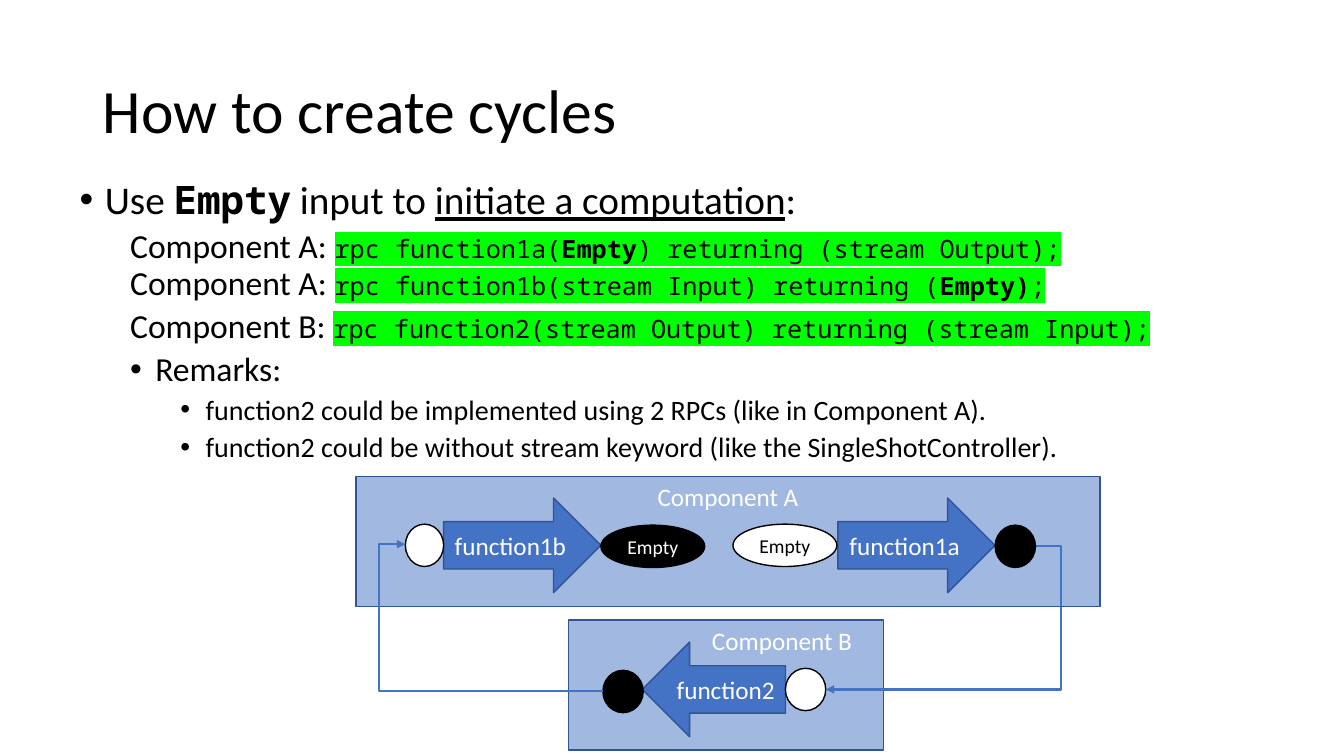
from dataclasses import dataclass
from lxml.etree import SubElement
from pptx import Presentation
from pptx.dml.color import RGBColor
from pptx.enum.shapes import MSO_CONNECTOR, MSO_SHAPE
from pptx.enum.text import MSO_ANCHOR, MSO_AUTO_SIZE, PP_ALIGN
from pptx.oxml.ns import qn
from pptx.util import Pt

SCALE = 9144


@dataclass(frozen=True)
class Theme:
    """Colours, fonts and type sizes of the slide."""
    blue: str = "4472C4"
    edge: str = "325491"
    white: str = "FFFFFF"
    black: str = "000000"
    green: str = "00FF00"
    sans: str = "Calibri"
    mono: str = "Noto Sans Mono"
    title: int = 44
    lead: int = 28
    item: int = 24
    note: int = 20
    label: int = 18
    small: int = 14


THEME = Theme()


def px(count):
    """Turn px into EMU."""
    return count * SCALE


def write(par, text, size=THEME.label, color=THEME.black, font=THEME.sans,
          bold=False, under=False, mark=None):
    """Add one formatted run to a paragraph."""
    run = par.add_run()
    run.text = text
    run.font.size = Pt(size)
    run.font.bold = bold
    run.font.underline = under
    run.font.color.rgb = RGBColor.from_string(color)
    if mark:
        light = SubElement(run.font._element, qn("a:highlight"))
        SubElement(light, qn("a:srgbClr"), val=mark)
    run.font.name = font


class Board:
    """Draws elements on the current slide in one style."""

    def __init__(self, deck, theme):
        """Open a title and content slide."""
        self.theme = theme
        self.slide = deck.slides.add_slide(deck.slide_layouts[1])

    def hold(self, index, box, anchor):
        """Move a placeholder and return its text frame."""
        shape = self.slide.placeholders[index]
        shape.left, shape.top, shape.width, shape.height = map(px, box)
        frame = shape.text_frame
        frame.word_wrap = True
        frame.auto_size = MSO_AUTO_SIZE.NONE
        frame.vertical_anchor = anchor
        return frame

    def title(self, text, box):
        """Fill the title."""
        par = self.hold(0, box, MSO_ANCHOR.MIDDLE).paragraphs[0]
        par.alignment = PP_ALIGN.LEFT
        par.line_spacing = 0.9
        write(par, text, size=self.theme.title)

    def body(self, rows, box):
        """Fill the list from rows of level, indent, bullet and runs."""
        frame = self.hold(1, box, MSO_ANCHOR.TOP)
        for num, (level, left, dot, runs) in enumerate(rows):
            par = frame.add_paragraph() if num else frame.paragraphs[0]
            par.level = level
            par.line_spacing = 0.9 if level else 2.1
            par.space_before = Pt(5 if level else 10)
            par.space_after = Pt(0)
            props = par._p.get_or_add_pPr()
            props.set("marL", str(px(left)))
            props.set("indent", str(px(-25 if dot else 0)))
            if dot:
                SubElement(props, qn("a:buFont"), typeface="Arial")
                SubElement(props, qn("a:buChar"), char="•")
            else:
                SubElement(props, qn("a:buNone"))
            for text, style in runs:
                if text == "\n":
                    gap = SubElement(par._p, qn("a:br"))
                    SubElement(gap, qn("a:rPr"), sz=str(self.theme.label * 100))
                else:
                    write(par, text, **style)

    def shape(self, kind, box, fill, edge, text="", anchor=MSO_ANCHOR.MIDDLE,
              align=PP_ALIGN.CENTER, inset=10, **style):
        """Draw a preset shape with an optional label."""
        shape = self.slide.shapes.add_shape(kind, *map(px, box))
        shape.shadow.inherit = False
        shape.fill.solid()
        shape.fill.fore_color.rgb = RGBColor.from_string(fill)
        shape.line.color.rgb = RGBColor.from_string(edge)
        shape.line.width = Pt(1)
        if text:
            frame = shape.text_frame
            frame.vertical_anchor = anchor
            frame.margin_right = px(inset)
            par = frame.paragraphs[0]
            par.alignment = align
            write(par, text, **style)
        return shape

    def panel(self, text, box, **style):
        """Draw a half transparent component box."""
        look = self.theme
        shape = self.shape(MSO_SHAPE.RECTANGLE, box, look.blue, look.edge, text,
                           anchor=MSO_ANCHOR.TOP, color=look.white, **style)
        tint = shape._element.spPr.find(qn("a:solidFill")).find(qn("a:srgbClr"))
        SubElement(tint, qn("a:alpha"), val="50000")

    def arrow(self, kind, text, box):
        """Draw a block arrow for a function."""
        look = self.theme
        self.shape(kind, box, look.blue, look.edge, text, color=look.white)

    def port(self, box, dark, text=""):
        """Draw an oval port, black for output and white for input."""
        look = self.theme
        fill, ink = (look.black, look.white) if dark else (look.white, look.black)
        self.shape(MSO_SHAPE.OVAL, box, fill, look.black, text,
                   size=look.small, color=ink)

    def link(self, start, end, bend):
        """Draw a bent arrow whose middle part lies at x = bend."""
        line = self.slide.shapes.add_connector(
            MSO_CONNECTOR.ELBOW, *map(px, start + end))
        line.line.color.rgb = RGBColor.from_string(self.theme.blue)
        line.line.width = Pt(1.5)
        props = line._element.spPr
        SubElement(props.find(qn("a:ln")), qn("a:tailEnd"), type="triangle")
        SubElement(props, qn("a:effectLst"))
        ratio = round((bend - start[0]) / (end[0] - start[0]) * 100000)
        guides = props.find(qn("a:prstGeom")).find(qn("a:avLst"))
        SubElement(guides, qn("a:gd"), name="adj1", fmla=f"val {ratio}")


def main():
    """Build and save the slide."""
    deck = Presentation()
    deck.slide_width, deck.slide_height = px(1333), px(750)
    board = Board(deck, THEME)
    lead = {"size": THEME.lead}
    item = {"size": THEME.item}
    note = {"size": THEME.note}
    code = {"font": THEME.mono, "mark": THEME.green}
    bold = {**code, "bold": True}

    board.title("How to create cycles", (92, 40, 1150, 145))
    board.body([
        (0, 25, True, [
            ("Use ", lead),
            ("Empty", {**lead, "font": THEME.mono, "bold": True}),
            (" input to ", lead),
            ("initiate a computation", {**lead, "under": True}),
            (":", lead)]),
        (1, 50, False, [
            ("Component A: ", item), ("rpc function1a(", code),
            ("Empty", bold), (") returning (stream Output);", code),
            ("\n", {}),
            ("Component A: ", item),
            ("rpc function1b(stream Input) returning (", code),
            ("Empty)", bold), (";", code)]),
        (1, 50, False, [
            ("Component B: ", item),
            ("rpc function2(stream Output) returning (stream Input);", code)]),
        (1, 75, True, [("Remarks:", item)]),
        (2, 125, True, [
            ("function2 could be implemented using 2 RPCs (like in Component A).", note)]),
        (2, 125, True, [
            ("function2 could be without stream keyword (like the SingleShotController).", note)]),
    ], (69, 118, 1138, 355))

    board.panel("Component B", (564, 615, 312, 129), align=PP_ALIGN.RIGHT, inset=31)
    board.arrow(MSO_SHAPE.LEFT_ARROW, "function2", (637, 637, 142, 94))
    board.port((779, 663, 40, 42), False)
    board.port((598, 665, 40, 42), True)
    board.link((1027, 542), (819, 684), 1052)

    board.panel("Component A", (353, 473, 738, 129))
    for text, left in (("function1a", 831), ("function1b", 440)):
        board.arrow(MSO_SHAPE.RIGHT_ARROW, text, (left, 494, 156, 94))
    board.port((727, 520, 103, 42), False, "Empty")
    board.port((987, 521, 40, 42), True)
    board.port((402, 520, 38, 42), False)
    board.port((596, 521, 103, 42), True, "Empty")
    board.link((598, 686), (402, 540), 376)
    deck.save("out.pptx")


if __name__ == "__main__":
    main()
